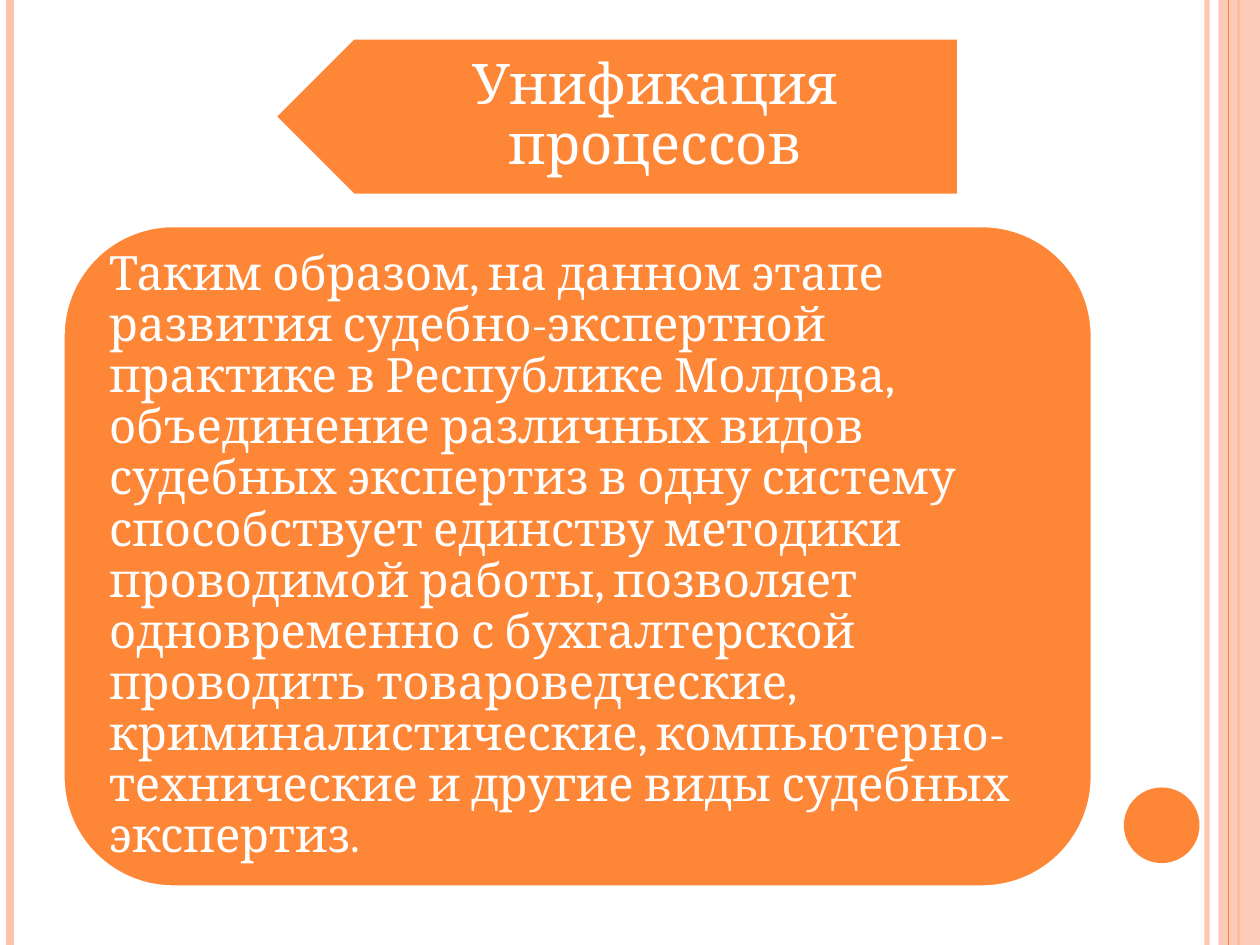
from dataclasses import dataclass

from lxml.etree import SubElement
from pptx import Presentation
from pptx.dml.color import RGBColor
from pptx.enum.shapes import MSO_CONNECTOR, MSO_SHAPE
from pptx.enum.text import MSO_ANCHOR, MSO_AUTO_SIZE, PP_ALIGN
from pptx.oxml.ns import qn
from pptx.util import Inches, Pt


@dataclass(frozen=True)
class Theme:
    """Colours, font and type sizes of the slide."""
    orange: str = "FE8637"
    peach: str = "FEC3AE"
    white: str = "FFFFFF"
    font: str = "Cambria"
    heading: int = 32
    body: int = 27


def write(frame, text, *, font, size, color, align=PP_ALIGN.LEFT, insets=(0.11,) * 4):
    """Fill a text frame with one formatted paragraph."""
    frame.word_wrap = True
    frame.auto_size = MSO_AUTO_SIZE.NONE
    frame.vertical_anchor = MSO_ANCHOR.MIDDLE
    (frame.margin_left, frame.margin_top,
     frame.margin_right, frame.margin_bottom) = map(Inches, insets)
    paragraph = frame.paragraphs[0]
    paragraph.alignment = align
    paragraph.line_spacing = 0.9
    run = paragraph.add_run()
    run.text = text
    run.font.name = font
    run.font.size = Pt(size)
    run.font.color.rgb = RGBColor.from_string(color)


def set_opacity(element, percent):
    """Make the first solid colour of an element partly transparent."""
    color = next(element.spPr.iter(qn("a:srgbClr")))
    SubElement(color, qn("a:alpha"), val=str(percent * 1000))


class SlideBuilder:
    """Draws on one slide, measured on a grid of 100 columns by 75 rows."""
    COLUMNS, ROWS = 100, 75

    def __init__(self, deck, theme):
        """Add a title-only slide to the deck."""
        self.theme = theme
        self.column = deck.slide_width / self.COLUMNS
        self.row = deck.slide_height / self.ROWS
        self.slide = deck.slides.add_slide(deck.slide_layouts[5])

    def place(self, left, top, width, height):
        """Turn a grid box into slide lengths."""
        return (round(left * self.column), round(top * self.row),
                round(width * self.column), round(height * self.row))

    def stripe(self, column, color, width, opacity=100):
        """Draw a full-height vertical line."""
        x, _, _, bottom = self.place(column, 0, 0, self.ROWS)
        stripe = self.slide.shapes.add_connector(MSO_CONNECTOR.STRAIGHT, x, 0, x, bottom)
        stripe.line.color.rgb = RGBColor.from_string(color)
        stripe.line.width = Pt(width)
        if opacity < 100:
            set_opacity(stripe.element, opacity)
        SubElement(stripe.element.spPr, qn("a:effectLst"))

    def block(self, kind, box, color, outline=None, opacity=100):
        """Draw a filled preset shape."""
        block = self.slide.shapes.add_shape(kind, *self.place(*box))
        block.shadow.inherit = False
        block.fill.solid()
        block.fill.fore_color.rgb = RGBColor.from_string(color)
        if opacity < 100:
            set_opacity(block.element, opacity)
        if outline:
            block.line.color.rgb = RGBColor.from_string(outline)
            block.line.width = Pt(2)
        else:
            block.line.fill.background()
        return block

    def heading(self, text, box):
        """Set the slide title on top of what is drawn so far."""
        heading = self.slide.shapes.title
        heading.left, heading.top, heading.width, heading.height = self.place(*box)
        write(heading.text_frame, text, font=self.theme.font, size=self.theme.heading,
              color=self.theme.white, align=PP_ALIGN.CENTER, insets=(0.55, 0.13, 0.25, 0.13))
        tree = heading.element.getparent()
        tree.append(heading.element)

    def panel(self, text, box):
        """Draw a rounded panel with body text."""
        panel = self.block(MSO_SHAPE.ROUNDED_RECTANGLE, box, self.theme.orange, self.theme.white)
        write(panel.text_frame, text, font=self.theme.font, size=self.theme.body,
              color=self.theme.white)


def main():
    """Build the slide and save it."""
    theme = Theme()
    deck = Presentation()
    deck.slide_width, deck.slide_height = Inches(10), Inches(7.5)
    page = SlideBuilder(deck, theme)

    page.stripe(95.8, theme.peach, 3, opacity=93)
    page.stripe(0.8, theme.peach, 4.5)
    page.stripe(98.3, theme.orange, 1.5)
    page.block(MSO_SHAPE.RECTANGLE, (96.7, 0, 3.3, 75), theme.peach, opacity=87)
    page.stripe(97.5, theme.orange, 0.75)
    page.block(MSO_SHAPE.OVAL, (89.2, 62.5, 6, 6), theme.orange)

    arrow = page.block(MSO_SHAPE.PENTAGON, (21.8, 3, 54.3, 12.5), theme.orange, theme.white)
    arrow.rotation = 180
    page.heading("Унификация процессов", (24.9, 3, 51.2, 12.5))
    page.panel(
        "Таким образом, на данном этапе развития судебно-экспертной практике "
        "в Республике Молдова, объединение различных видов судебных экспертиз "
        "в одну систему способствует единству методики проводимой работы, "
        "позволяет одновременно с бухгалтерской проводить товароведческие, "
        "криминалистические, компьютерно-технические и другие виды судебных экспертиз.",
        (5, 17.9, 81.7, 52.5))

    deck.save("out.pptx")


if __name__ == "__main__":
    main()
